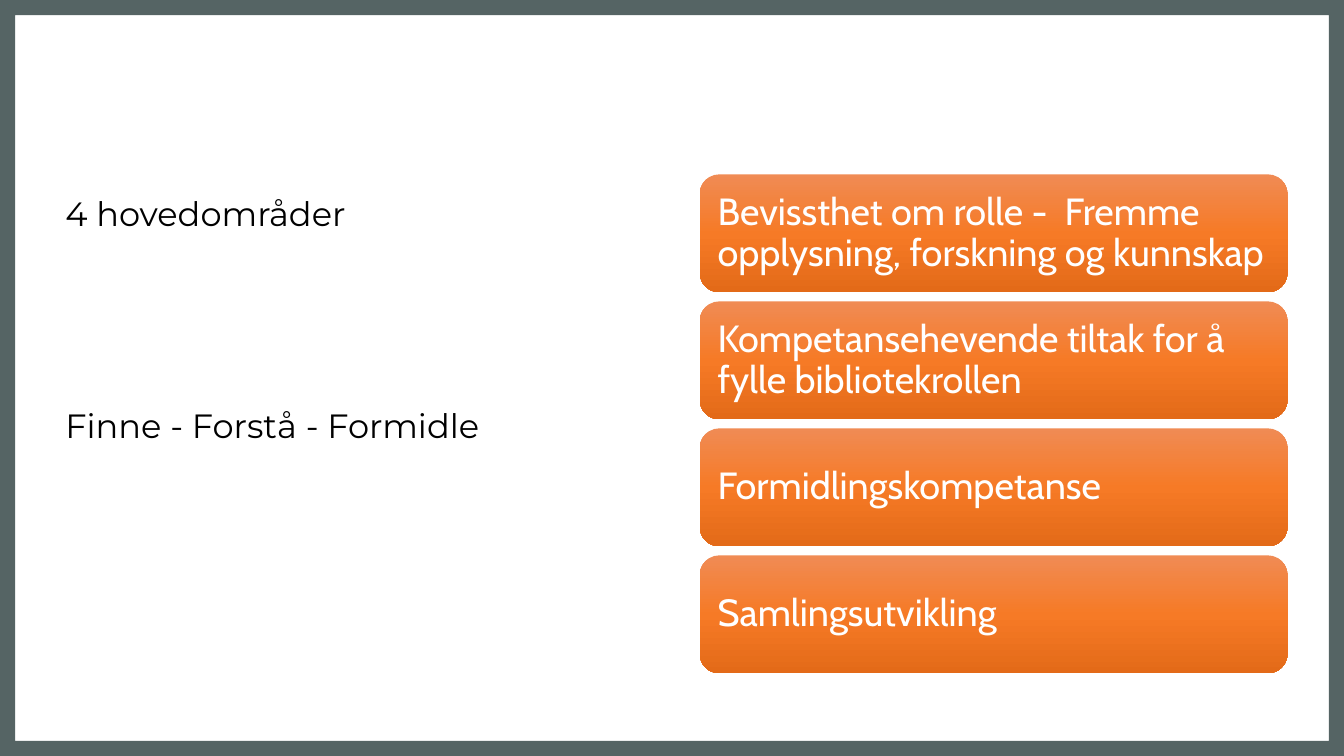
from copy import deepcopy
from dataclasses import dataclass

from pptx import Presentation
from pptx.dml.color import RGBColor
from pptx.enum.shapes import MSO_SHAPE
from pptx.enum.text import MSO_ANCHOR, PP_ALIGN
from pptx.oxml.ns import qn
from pptx.shapes.autoshape import Shape
from pptx.slide import Slide
from pptx.text.text import _Paragraph
from pptx.util import Inches, Pt

COLORS = {
    "frame": "556464",
    "black": "000000",
    "white": "FFFFFF",
    "orange_light": "F08B54",
    "orange": "F67A26",
    "orange_dark": "E36A18",
}
GRADIENT = [(0, "orange_light"), (0.5, "orange"), (1, "orange_dark")]
CARD_TOP = 1.73
CARD_PITCH = 1.26


@dataclass
class Card:
    text: str
    row: int


@dataclass
class Heading:
    text: str
    space_before: float


CARDS = [
    Card(text, row)
    for row, text in enumerate([
        "Bevissthet om rolle -  Fremme opplysning, forskning og kunnskap",
        "Kompetansehevende tiltak for å fylle bibliotekrollen",
        "Formidlingskompetanse",
        "Samlingsutvikling",
    ])
]
HEADINGS = [Heading("4 hovedområder", 0), Heading("Finne - Forstå - Formidle", 113)]


def rgb(name: str) -> RGBColor:
    return RGBColor.from_string(COLORS[name])


def set_font(p: _Paragraph, name: str, size: float, color: str) -> None:
    p.font.name = name
    p.font.size = Pt(size)
    p.font.color.rgb = rgb(color)


def fill_gradient(sp: Shape) -> None:
    sp.fill.gradient()
    sp.fill.gradient_angle = 270
    stops = sp._element.spPr.find(qn("a:gradFill")).find(qn("a:gsLst"))
    stops.append(deepcopy(stops[-1]))
    for stop, (position, color) in zip(sp.fill.gradient_stops, GRADIENT):
        stop.position = position
        stop.color.rgb = rgb(color)


def add_frame(s: Slide, width: int, height: int) -> None:
    sp = s.shapes.add_shape(MSO_SHAPE.FRAME, 0, 0, width, height)
    sp.adjustments[0] = 0.02
    sp.shadow.inherit = False
    sp.fill.solid()
    sp.fill.fore_color.rgb = rgb("frame")
    sp.line.fill.background()


def add_headings(s: Slide, headings: list[Heading]) -> None:
    box = s.shapes.add_textbox(Inches(0.55), Inches(1.73), Inches(5.83), Inches(4.99))
    tf = box.text_frame
    tf.word_wrap = True
    for i, heading in enumerate(headings):
        p = tf.add_paragraph() if i else tf.paragraphs[0]
        p.text = heading.text
        p.line_spacing = 1.33
        p.space_before = Pt(heading.space_before)
        set_font(p, "Montserrat", 24, "black")


def add_card(s: Slide, card: Card) -> None:
    top = CARD_TOP + card.row * CARD_PITCH
    sp = s.shapes.add_shape(
        MSO_SHAPE.ROUNDED_RECTANGLE, Inches(6.94), Inches(top), Inches(5.83), Inches(1.17)
    )
    sp.shadow.inherit = False
    sp.line.fill.background()
    fill_gradient(sp)
    tf = sp.text_frame
    tf.word_wrap = True
    tf.vertical_anchor = MSO_ANCHOR.MIDDLE
    tf.margin_left = tf.margin_right = Inches(0.12)
    tf.margin_top = tf.margin_bottom = Inches(0.12)
    p = tf.paragraphs[0]
    p.text = card.text
    p.alignment = PP_ALIGN.LEFT
    p.line_spacing = 0.9
    set_font(p, "Cabin", 27, "white")


def main() -> None:
    prs = Presentation()
    prs.slide_width = Inches(13.33)
    prs.slide_height = Inches(7.5)
    s = prs.slides.add_slide(prs.slide_layouts[6])
    add_frame(s, prs.slide_width, prs.slide_height)
    add_headings(s, HEADINGS)
    for card in CARDS:
        add_card(s, card)
    prs.save("out.pptx")


if __name__ == "__main__":
    main()
